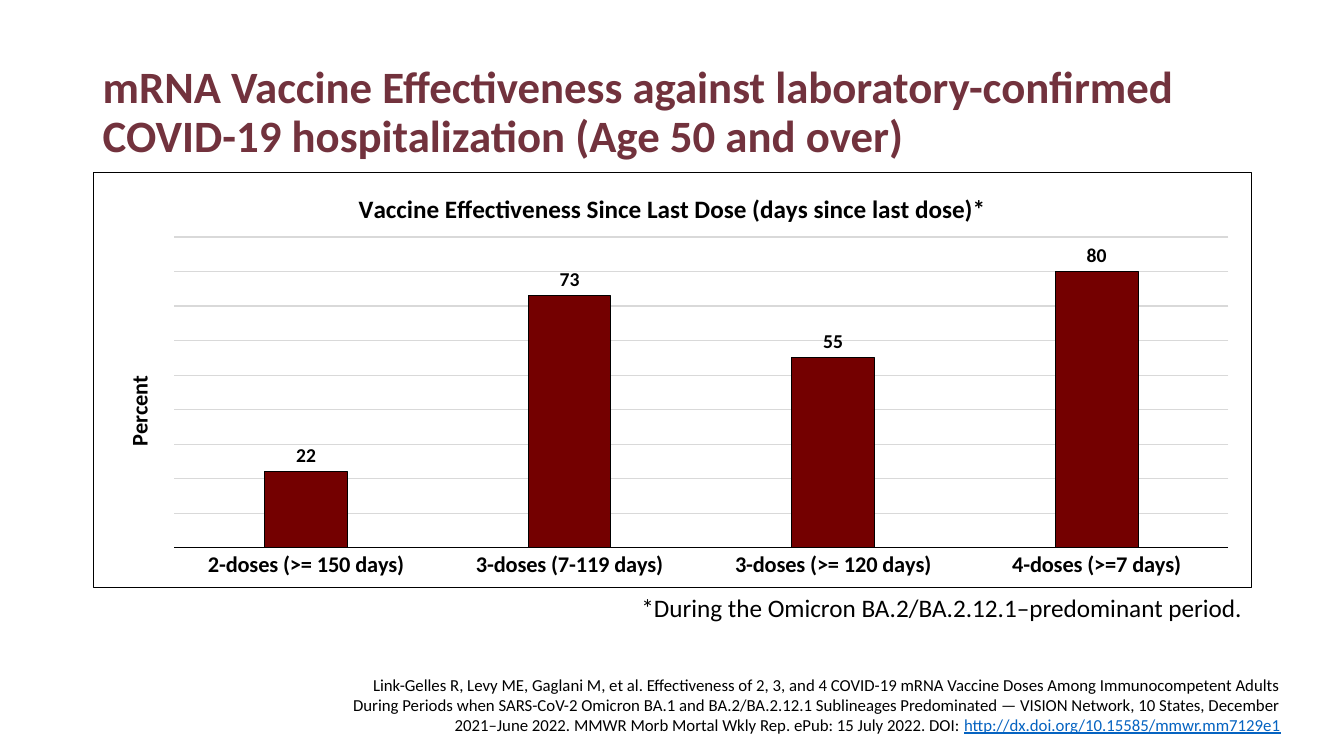
"""Build the vaccine effectiveness slide with its column chart and citation."""
import pptx
import pptx.chart.data
import pptx.dml.color
import pptx.enum.chart
import pptx.enum.text
import pptx.oxml
import pptx.oxml.ns
import pptx.util

RGB = pptx.dml.color.RGBColor
ALIGN = pptx.enum.text.PP_ALIGN
ANCHOR = pptx.enum.text.MSO_ANCHOR
BLACK, WINE, MAROON = RGB(0, 0, 0), RGB(0x72, 0x32, 0x3D), RGB(0x74, 0, 0)
GRID_GREY, LINK_BLUE = RGB(0xD9, 0xD9, 0xD9), RGB(0x05, 0x63, 0xC1)

WIDTH, HEIGHT = 13.33, 7.5
MARGIN, CONTENT = 0.92, 11.5
CHART_BOX = (MARGIN, 1.71, CONTENT, 4.12)
PLOT_SHARES = {"x": 0.07, "y": 0.155, "w": 0.91, "h": 0.75}
PERCENT_SHARES = {"x": 0.023, "y": 0.48}

EFFECTIVENESS = {
    "2-doses (>= 150 days)": 22,
    "3-doses (7-119 days)": 73,
    "3-doses (>= 120 days)": 55,
    "4-doses (>=7 days)": 80,
}
CHART_TITLE = "Vaccine Effectiveness Since Last Dose (days since last dose)*"
HEADLINE = ("mRNA Vaccine Effectiveness against laboratory-confirmed "
            "COVID-19 hospitalization (Age 50 and over)")
CITATION = (
    "Link-Gelles R, Levy ME, Gaglani M, et al. Effectiveness of 2, 3, and 4 COVID-19 "
    "mRNA Vaccine Doses Among Immunocompetent Adults During Periods when SARS-CoV-2 "
    "Omicron BA.1 and BA.2/BA.2.12.1 Sublineages Predominated — VISION Network, "
    "10 States, December 2021–June 2022. MMWR Morb Mortal Wkly Rep. "
    "ePub: 15 July 2022. DOI: "
)
DOI = "http://dx.doi.org/10.15585/mmwr.mm7129e1"
FOOTNOTE = "*During the Omicron BA.2/BA.2.12.1–predominant period."


def font_format(size, color=BLACK, **extra):
    return {"name": "Calibri", "size": pptx.util.Pt(size), "color": color, **extra}


TEXTS = [
    ((MARGIN, 0.4, CONTENT, 1.45),
     {"alignment": ALIGN.LEFT, "line_spacing": 0.9}, ANCHOR.MIDDLE,
     [(HEADLINE, font_format(32, WINE, bold=True))]),
    ((3.17, 6.64, 9.63, 0.71), {"alignment": ALIGN.RIGHT}, ANCHOR.TOP,
     [(CITATION, font_format(12)),
      (DOI, font_format(12, LINK_BLUE, underline=True))]),
    ((5.46, 5.83, 6.96, 0.4), {"alignment": ALIGN.RIGHT}, ANCHOR.TOP,
     [(FOOTNOTE, font_format(18))]),
]


def apply_format(target, values):
    for key, value in values.items():
        if key == "color":
            target.color.rgb = value
        else:
            setattr(target, key, value)


def set_line(line, color):
    line.color.rgb = color
    line.width = pptx.util.Pt(0.75)


def add_text(slide, box, paragraph_format, anchor, runs):
    frame = slide.shapes.add_textbox(*map(pptx.util.Inches, box)).text_frame
    apply_format(frame, {"word_wrap": True, "vertical_anchor": anchor})
    paragraph = frame.paragraphs[0]
    apply_format(paragraph, paragraph_format)
    for words, values in runs:
        run = paragraph.add_run()
        run.text = words
        apply_format(run.font, values)


def add_title(owner, words, size):
    frame = owner.text_frame
    frame.text = words
    apply_format(frame.paragraphs[0].runs[0].font, font_format(size, bold=True))


def place(element, shares, inner=False):
    ns = pptx.oxml.ns.nsdecls("c")
    modes = '<c:layoutTarget val="inner"/>' if inner else ""
    modes += '<c:xMode val="edge"/><c:yMode val="edge"/>'
    sizes = "".join(f'<c:{key} val="{share}"/>' for key, share in shares.items())
    layout = pptx.oxml.parse_xml(
        f"<c:layout {ns}><c:manualLayout>{modes}{sizes}</c:manualLayout></c:layout>")
    for old in element.findall(pptx.oxml.ns.qn("c:layout")):
        element.remove(old)
    text = element.find(pptx.oxml.ns.qn("c:tx"))
    element.insert(0 if text is None else 1, layout)


def add_border(chart):
    border = pptx.oxml.parse_xml(
        f'<c:spPr {pptx.oxml.ns.nsdecls("c", "a")}><a:noFill/><a:ln w="9525"><a:solidFill>'
        f'<a:srgbClr val="{BLACK}"/></a:solidFill></a:ln></c:spPr>')
    chart.element.find(pptx.oxml.ns.qn("c:chart")).addnext(border)


def add_effectiveness(slide):
    doses = pptx.chart.data.CategoryChartData()
    doses.categories = list(EFFECTIVENESS)
    doses.add_series("Series 1", list(EFFECTIVENESS.values()))
    chart = slide.shapes.add_chart(
        pptx.enum.chart.XL_CHART_TYPE.COLUMN_CLUSTERED,
        *map(pptx.util.Inches, CHART_BOX), doses).chart
    apply_format(chart.font, font_format(10))
    chart.has_legend = False
    add_title(chart.chart_title, CHART_TITLE, 18)

    plot = chart.plots[0]
    apply_format(plot, {"gap_width": 219, "overlap": -27,
                        "vary_by_categories": False, "has_data_labels": True})
    apply_format(plot.data_labels, {
        "show_value": True,
        "position": pptx.enum.chart.XL_LABEL_POSITION.OUTSIDE_END})
    apply_format(plot.data_labels.font, font_format(14, bold=True))
    columns = plot.series[0].format
    columns.fill.solid()
    columns.fill.fore_color.rgb = MAROON
    set_line(columns.line, BLACK)

    periods, percent = chart.category_axis, chart.value_axis
    periods.major_tick_mark = pptx.enum.chart.XL_TICK_MARK.NONE
    apply_format(periods.tick_labels.font, font_format(16, bold=True))
    set_line(periods.format.line, BLACK)
    apply_format(percent, {"minimum_scale": 0, "maximum_scale": 90, "major_unit": 10,
                           "has_major_gridlines": True, "visible": False})
    set_line(percent.major_gridlines.format.line, GRID_GREY)
    add_title(percent.axis_title, "Percent", 16)
    body = percent.axis_title.text_frame._txBody.bodyPr
    body.set("rot", "-5400000")
    body.set("vert", "horz")

    place(percent.axis_title._element, PERCENT_SHARES)
    place(plot._element.getparent(), PLOT_SHARES, inner=True)
    add_border(chart)


def main():
    deck = pptx.Presentation()
    apply_format(deck, {"slide_width": pptx.util.Inches(WIDTH),
                        "slide_height": pptx.util.Inches(HEIGHT)})
    slide = deck.slides.add_slide(deck.slide_layouts[6])
    add_effectiveness(slide)
    for text in TEXTS:
        add_text(slide, *text)
    deck.save("out.pptx")


if __name__ == "__main__":
    main()
